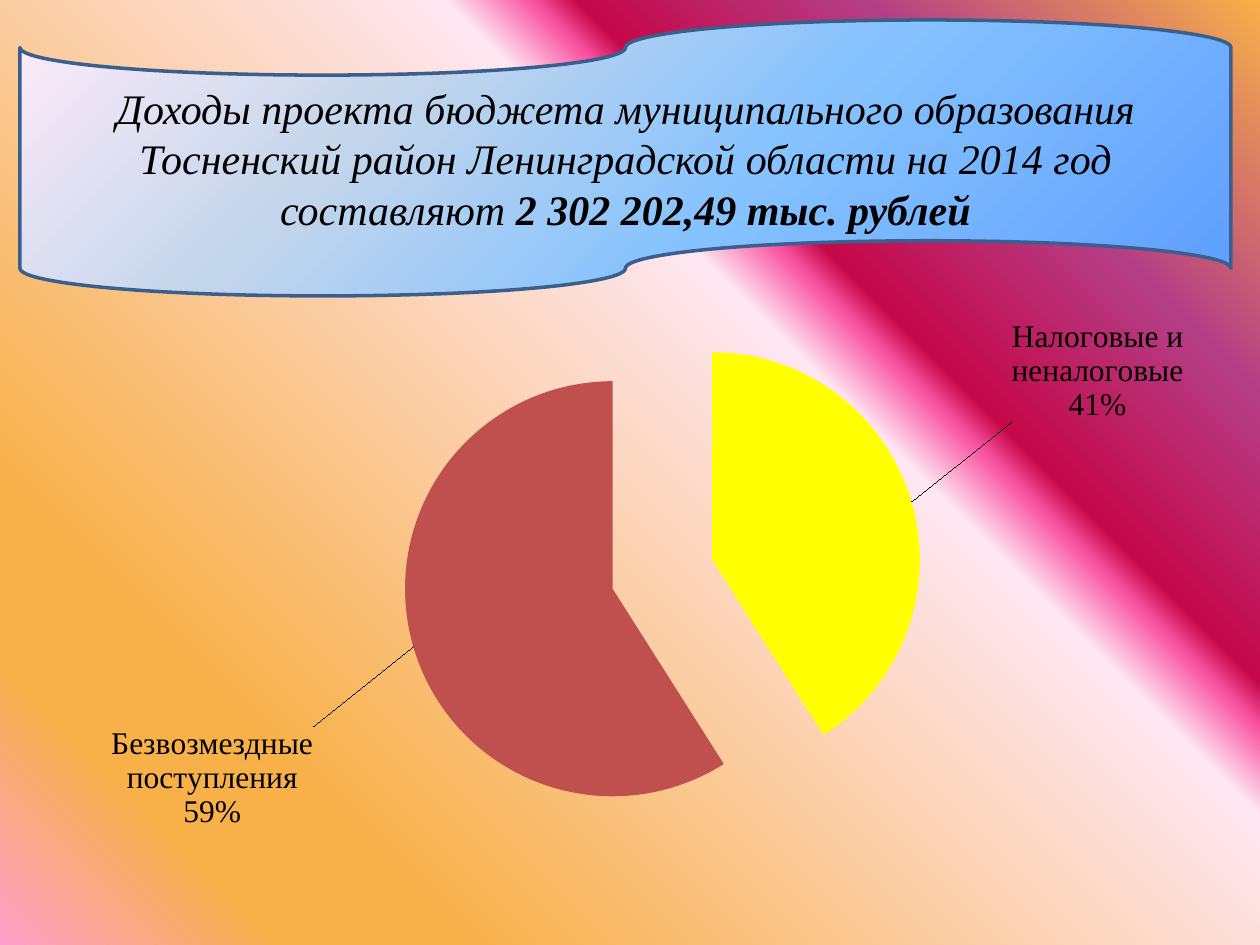
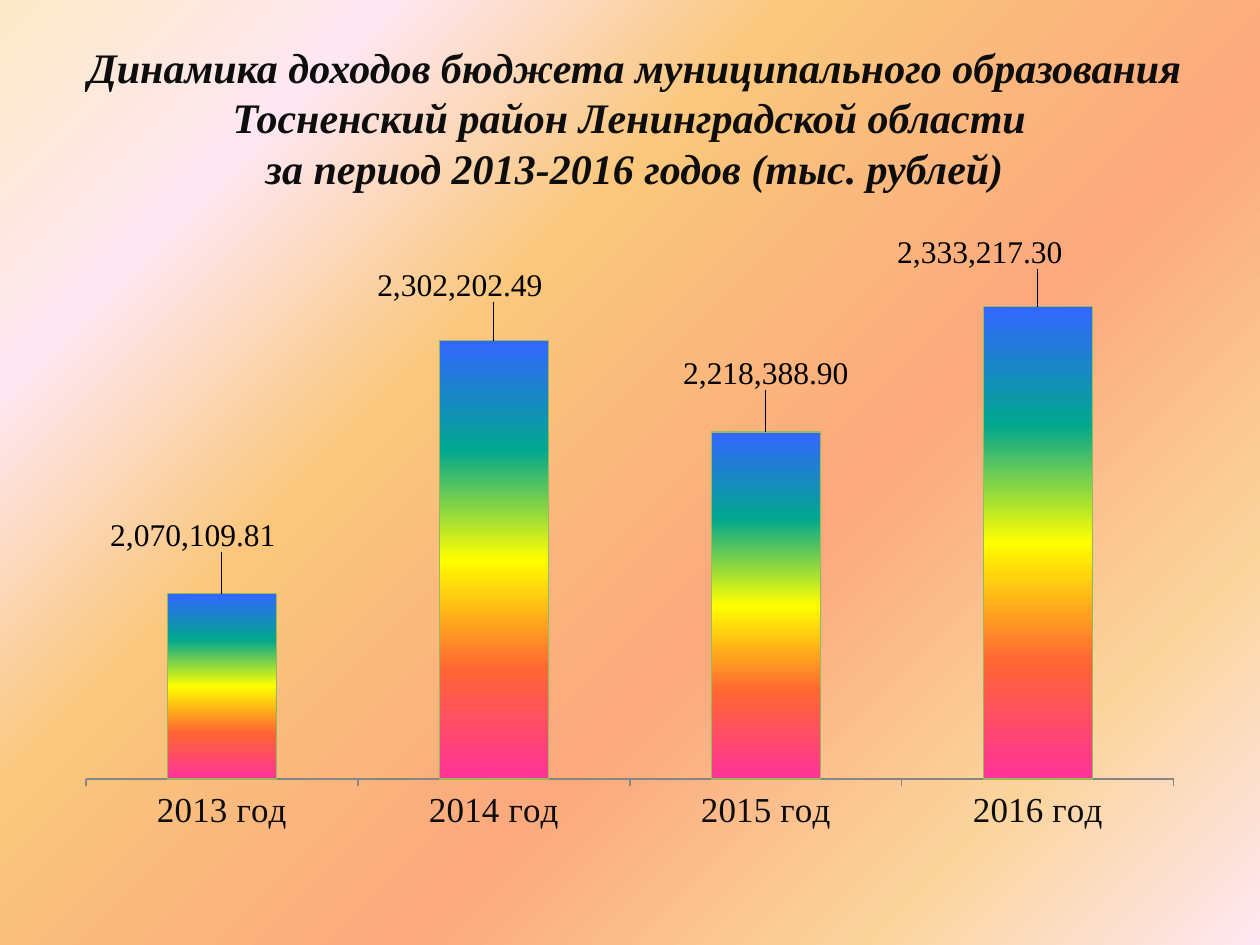
from dataclasses import dataclass

from pptx import Presentation
from pptx.chart.data import CategoryChartData
from pptx.dml.color import RGBColor
from pptx.enum.chart import XL_CHART_TYPE as ChartType
from pptx.enum.chart import XL_LABEL_POSITION as LabelPosition
from pptx.enum.chart import XL_TICK_MARK as TickMark
from pptx.enum.shapes import MSO_SHAPE as Shape
from pptx.enum.text import MSO_ANCHOR as Anchor
from pptx.enum.text import PP_ALIGN as Align
from pptx.oxml import parse_xml
from pptx.oxml.ns import nsdecls, qn
from pptx.util import Emu, Pt

PX_PER_INCH = 126
SLIDE_SIZE = (1260, 945)
TITLE_ONLY, BLANK = 5, 6


@dataclass(frozen=True)
class Theme:
    font: str = "Times New Roman"
    chart_font: str = "Calibri"
    heading_size: int = 24
    axis_size: int = 20
    label_size: int = 18
    black: str = "000000"
    ink: str = "0D0D0D"
    banner_line: str = "3A5F8C"
    bar_line: str = "98B955"
    axis_line: str = "868686"
    slices: tuple = ("FFFF00", "C0504D")
    # Gradients: clockwise angle, then (percent, colour) stops
    sunset: tuple = (315, ((0, "FC9FCB"), (13, "F8B049"), (21, "F8B049"), (63, "FEE7F2"),
                           (67, "F952A0"), (69, "C50849"), (82, "B43E85"), (100, "F8B049")))
    peach: tuple = (45, ((0, "FBEAC7"), (18, "FEE7F2"), (36, "FAC77D"),
                         (61, "FBA97D"), (82, "FBD49C"), (100, "FEE7F2")))
    sky: tuple = (225, ((0, "5E9EFF"), (40, "85C2FF"), (70, "C4D6EB"), (100, "FFEBFA")))
    rainbow: tuple = (270, ((0, "FF3399"), (25, "FF6633"), (50, "FFFF00"),
                            (75, "01A78F"), (100, "3366FF")))


def px(length):
    return Emu(round(length * 914400 / PX_PER_INCH))


def rgb(code):
    return RGBColor.from_string(code)


def set_font(font, name, size, color, bold=False, italic=False):
    font.name, font.size = name, Pt(size)
    font.bold, font.italic = bold, italic
    font.color.rgb = rgb(color)


def write(frame, text, bold_tail="", **style):
    """Fill a frame with one centred paragraph; bold_tail ends it in bold."""
    frame.word_wrap = True
    frame.vertical_anchor = Anchor.MIDDLE
    para = frame.paragraphs[0]
    para.alignment = Align.CENTER
    for index, line in enumerate(text.split("\n")):
        if index:
            para.add_line_break()
        span = para.add_run()
        span.text = line
        set_font(span.font, **style)
    if bold_tail:
        span = para.add_run()
        span.text = bold_tail
        set_font(span.font, **{**style, "bold": True})


def set_gradient(fill, owner, gradient):
    """Give a fill, found inside the owner element, its stops and angle."""
    angle, stops = gradient
    fill.gradient()
    element = next(owner.iter(qn("a:gradFill")))
    stop_list = element.find(qn("a:gsLst"))
    for stop in list(stop_list):
        stop_list.remove(stop)
    for percent, color in stops:
        stop_list.append(parse_xml(
            f'<a:gs {nsdecls("a")} pos="{percent * 1000}"><a:srgbClr val="{color}"/></a:gs>'))
    direction = element.find(qn("a:lin"))
    direction.set("ang", str(angle * 60000))
    direction.set("scaled", "0")


def manual_layout(values, settings=""):
    parts = "".join(f'<c:{name} val="{value:.4f}"/>' for name, value in zip("xywh", values))
    return parse_xml(f'<c:layout {nsdecls("c")}><c:manualLayout>{settings}{parts}'
                     '</c:manualLayout></c:layout>')


class SlideBuilder:
    def __init__(self, deck, theme):
        self.deck, self.theme, self.slide = deck, theme, None

    def new_slide(self, layout, gradient):
        self.slide = self.deck.slides.add_slide(self.deck.slide_layouts[layout])
        set_gradient(self.slide.background.fill, self.slide.element, gradient)

    def heading_style(self, **changes):
        return {"name": self.theme.font, "size": self.theme.heading_size,
                "italic": True, **changes}

    def title(self, box, text):
        title = self.slide.shapes.title
        title.left, title.top, title.width, title.height = map(px, box)
        write(title.text_frame, text, **self.heading_style(color=self.theme.ink, bold=True))

    def banner(self, box, text, bold_tail):
        tape = self.slide.shapes.add_shape(Shape.FLOWCHART_PUNCHED_TAPE, *map(px, box))
        tape.shadow.inherit = False
        set_gradient(tape.fill, tape.element, self.theme.sky)
        tape.line.color.rgb = rgb(self.theme.banner_line)
        tape.line.width = Pt(2)
        write(tape.text_frame, text, bold_tail, **self.heading_style(color=self.theme.black))

    def chart(self, kind, box, plot_box, categories, values, number_format):
        data = CategoryChartData(number_format=number_format)
        data.categories = categories
        data.add_series("Series 1", values)
        chart = self.slide.shapes.add_chart(kind, *map(px, box), data).chart
        chart.has_title = chart.has_legend = False
        set_font(chart.font, self.theme.chart_font, self.theme.label_size, self.theme.black)

        # Clear backdrop and fixed inner plot area
        body = chart.element.find(qn("c:chart"))
        body.addnext(parse_xml(f'<c:spPr {nsdecls("c", "a")}><a:noFill/>'
                               '<a:ln><a:noFill/></a:ln></c:spPr>'))
        area = body.find(qn("c:plotArea"))
        for layout in area.findall(qn("c:layout")):
            area.remove(layout)
        width, height = box[2:]
        left, top, plot_width, plot_height = plot_box
        area.insert(0, manual_layout(
            (left / width, top / height, plot_width / width, plot_height / height),
            '<c:layoutTarget val="inner"/><c:xMode val="edge"/><c:yMode val="edge"/>'))
        return chart

    def labels(self, chart, box, shifts, number_format, share=False):
        """Place a label per point, shifted in px; share shows category and percent."""
        series = chart.plots[0].series[0]
        group = series.data_labels
        group.show_value = not share
        group.show_percentage = group.show_category_name = share
        group.number_format, group.number_format_is_linked = number_format, False
        for index, (right, down) in enumerate(shifts):
            label = series.points[index].data_label
            set_font(label.font, self.theme.font, self.theme.label_size, self.theme.black)
            label.position = LabelPosition.OUTSIDE_END
        for element, (right, down) in zip(chart.element.iter(qn("c:dLbl")), shifts):
            element.insert(1, manual_layout((right / box[2], down / box[3])))
            element.insert(2, parse_xml(f'<c:numFmt {nsdecls("c")} formatCode="{number_format}" '
                                        'sourceLinked="0"/>'))
            if share:
                for flag, value in (("showVal", 0), ("showCatName", 1), ("showPercent", 1)):
                    element.find(qn(f"c:{flag}")).set("val", str(value))
                element.append(parse_xml(f'<c:separator {nsdecls("c")}>\n</c:separator>'))

    def pie(self, box, plot_box, categories, values, shifts):
        chart = self.chart(ChartType.PIE, box, plot_box, categories, values, "General")
        name = next(chart.element.iter(qn("c:ser"))).find(qn("c:tx"))
        name.addnext(parse_xml(f'<c:explosion {nsdecls("c")} val="25"/>'))
        for index, color in enumerate(self.theme.slices):
            look = chart.plots[0].series[0].points[index].format
            look.fill.solid()
            look.fill.fore_color.rgb = rgb(color)
            look.line.fill.background()
        self.labels(chart, box, shifts, "0%", share=True)

    def columns(self, box, plot_box, categories, values, shifts, limits):
        number_format = "#,##0.00"
        chart = self.chart(ChartType.COLUMN_CLUSTERED, box, plot_box,
                           categories, values, number_format)
        plot = chart.plots[0]
        plot.vary_by_categories = False
        plot.gap_width = 150
        series = plot.series[0]
        series.invert_if_negative = False
        set_gradient(series.format.fill, chart.element, self.theme.rainbow)
        series.format.line.color.rgb = rgb(self.theme.bar_line)
        series.format.line.width = Pt(0.75)

        # Axes
        value_axis, category_axis = chart.value_axis, chart.category_axis
        value_axis.minimum_scale, value_axis.maximum_scale = limits
        value_axis.has_major_gridlines = False
        value_axis.visible = False
        category_axis.major_tick_mark = TickMark.OUTSIDE
        category_axis.format.line.color.rgb = rgb(self.theme.axis_line)
        category_axis.format.line.width = Pt(0.75)
        set_font(category_axis.tick_labels.font, self.theme.font,
                 self.theme.axis_size, self.theme.ink)
        self.labels(chart, box, shifts, number_format)


def main():
    deck = Presentation()
    deck.slide_width, deck.slide_height = map(px, SLIDE_SIZE)
    theme = Theme()
    builder = SlideBuilder(deck, theme)
    chart_box = (63, 220, 1134, 624)

    # Slide 1: structure of income
    builder.new_slide(BLANK, theme.sunset)
    builder.banner(
        (20, 20, 1211, 276),
        "Доходы проекта бюджета муниципального образования Тосненский район "
        "Ленинградской области на 2014 год составляют ",
        "2 302 202,49 тыс. рублей")
    builder.pie(chart_box, (232, 95, 735, 519),
                ("Налоговые и неналоговые", "Безвозмездные поступления"), (41, 59),
                shifts=((93, -78), (-93, 78)))

    # Slide 2: income by year
    builder.new_slide(TITLE_ONLY, theme.peach)
    builder.title(
        (39, 38, 1191, 158),
        "Динамика доходов бюджета муниципального образования Тосненский район "
        "Ленинградской области \nза период 2013-2016 годов (тыс. рублей)")
    builder.columns(chart_box, (23, 14, 1088, 545),
                    [f"{year} год" for year in range(2013, 2017)],
                    (2070109.81, 2302202.49, 2218388.9, 2333217.3),
                    shifts=((-29, -36), (-34, -33), (0, -36), (-58, -32)),
                    limits=(1900000, 2400000))

    deck.save("out.pptx")


if __name__ == "__main__":
    main()
